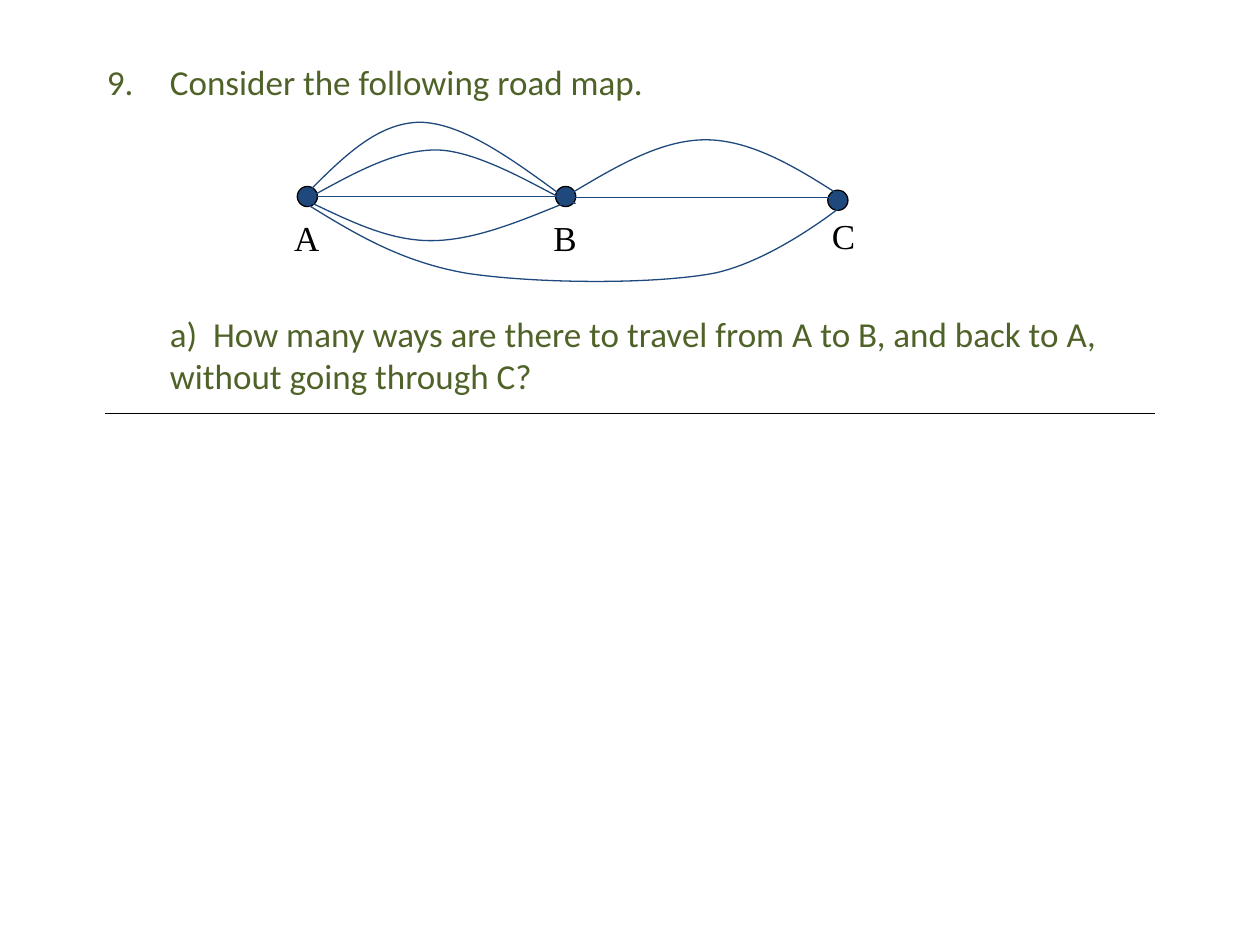
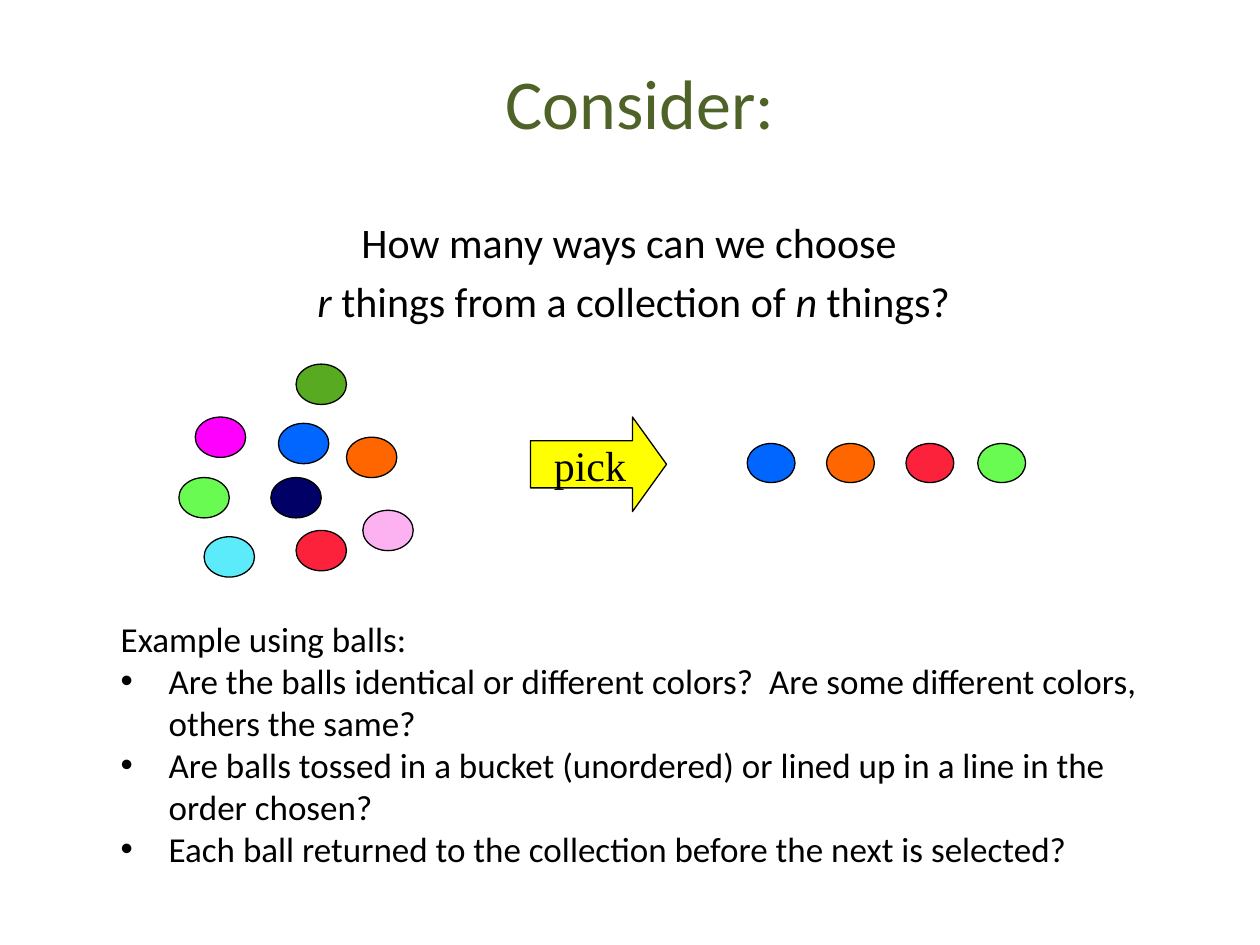
from lxml import etree
from pptx import Presentation
from pptx import util as u
from pptx.dml.color import RGBColor
from pptx.enum import shapes, text
from pptx.oxml.ns import qn

PX = 9144
BLACK = RGBColor(0x00, 0x00, 0x00)
OLIVE = RGBColor(0x4F, 0x62, 0x28)
NAVY = RGBColor(0x1F, 0x49, 0x7D)
YELLOW = RGBColor(0xFF, 0xFF, 0x00)
MAGENTA = RGBColor(0xFF, 0x00, 0xFF)
GREEN = RGBColor(0x58, 0xAA, 0x20)
BLUE = RGBColor(0x00, 0x66, 0xFF)
LIME = RGBColor(0x69, 0xFB, 0x51)
MIDNIGHT = RGBColor(0x00, 0x00, 0x66)
CYAN = RGBColor(0x5C, 0xEB, 0xFA)
PINK = RGBColor(0xFC, 0xB2, 0xF1)
RED = RGBColor(0xFC, 0x22, 0x3C)
ORANGE = RGBColor(0xFF, 0x66, 0x00)
SANS = "Calibri"
SERIF = "Times New Roman"
LEFT = text.PP_ALIGN.LEFT
CENTER = text.PP_ALIGN.CENTER
TOP = text.MSO_ANCHOR.TOP
BOTTOM = text.MSO_ANCHOR.BOTTOM
OVAL = shapes.MSO_SHAPE.OVAL


def write_text(parent, area, lines, size, color=BLACK, font=SANS, align=LEFT, anchor=TOP):
    box = parent.shapes.add_textbox(*[n * PX for n in area])
    frame = box.text_frame
    frame.word_wrap = True
    frame.vertical_anchor = anchor
    frame.text = "\n".join(lines)
    for para in frame.paragraphs:
        para.alignment = align
        para.font.size = u.Pt(size)
        for span in para.runs:
            span.font.size = u.Pt(size)
            span.font.name = font
            span.font.color.rgb = color
    return frame.paragraphs


def add_solid(parent, preset, area, color):
    shape = parent.shapes.add_shape(preset, *[n * PX for n in area])
    shape.shadow.inherit = False
    shape.fill.solid()
    shape.fill.fore_color.rgb = color
    shape.line.color.rgb = BLACK
    shape.line.width = u.Pt(0.75)
    return shape


deck = Presentation()
deck.slide_width = 1000 * PX
deck.slide_height = 750 * PX
blank = deck.slide_layouts[6]

road_page = deck.slides.add_slide(blank)
question = write_text(
    road_page, (75, 44, 850, 276),
    ["Consider the following road map.",
     "a)  How many ways are there to travel from A to B, and back to A, without going through C?"],
    20, OLIVE, anchor=BOTTOM)
for para in question:
    para._p.get_or_add_pPr().set("marL", str(50 * PX))
question[1].space_before = u.Pt(120)
number = question[0]._p.get_or_add_pPr()
number.set("indent", str(-50 * PX))
etree.SubElement(number, qn("a:buAutoNum"), type="arabicPeriod", startAt="9")

road_map = road_page.shapes.add_group_shape()
for left, top in [(657, 151), (236, 148), (441, 148)]:
    add_solid(road_map, OVAL, (left, top, 16, 16), NAVY)
for name, left, top in [("A", 216, 167), ("B", 421, 167), ("C", 642, 165)]:
    write_text(road_map, (left, top, 55, 44), [name], 20, font=SERIF, align=CENTER)

for parent, ends, color in [
    (road_page, (83, 328, 917, 328), BLACK),
    (road_map, (252, 156, 441, 156), NAVY),
    (road_map, (456, 157, 661, 157), NAVY),
]:
    line = parent.shapes.add_connector(shapes.MSO_CONNECTOR.STRAIGHT, *[n * PX for n in ends])
    line.line.color.rgb = color
    line.line.width = u.Pt(0.75)
    etree.SubElement(line._element.spPr, qn("a:effectLst"))

curved_roads = [
    [(242, 155), (271, 126), (299, 97), (334, 97), (369, 98), (410, 129), (451, 159)],
    [(247, 156), (280, 138), (313, 119), (346, 119), (380, 119), (431, 151), (447, 158),
     (464, 164), (455, 161), (446, 158)],
    [(449, 156), (486, 134), (523, 111), (560, 111), (597, 111), (634, 134), (671, 158)],
    [(245, 160), (277, 175), (308, 191), (342, 191), (377, 191), (414, 175), (451, 160)],
    [(245, 163), (281, 185), (318, 208), (371, 217), (425, 225), (516, 226), (566, 217),
     (615, 207), (670, 162), (670, 162)],
]
for controls in curved_roads:
    builder = road_map.shapes.build_freeform(*controls[0], scale=PX)
    builder.add_line_segments(controls[1:], close=False)
    road = builder.convert_to_shape()
    road.shadow.inherit = False
    road.fill.background()
    road.line.color.rgb = NAVY
    road.line.width = u.Pt(0.75)
    segments = list(road._element.iter(qn("a:lnTo")))
    outline = segments[0].getparent()
    for first in range(0, len(segments), 3):
        curve = etree.SubElement(outline, qn("a:cubicBezTo"))
        for segment in segments[first:first + 3]:
            curve.append(segment[0])
            outline.remove(segment)

ball_page = deck.slides.add_slide(blank)
choice = write_text(
    ball_page, (74, 167, 858, 106),
    ["How many ways can we choose ", ""],
    24, align=CENTER)
for para in choice:
    para.space_before = u.Pt(4.8)
for words, italic in [("r", True), (" things from a collection of ", False),
                      ("n", True), (" things?", False)]:
    span = choice[1].add_run()
    span.text = words
    span.font.size = u.Pt(24)
    span.font.name = SANS
    span.font.color.rgb = BLACK
    span.font.italic = italic

collection = ball_page.shapes.add_group_shape()
for left, top, color in [
    (155, 331, MAGENTA), (235, 289, GREEN), (221, 336, BLUE),
    (142, 379, LIME), (215, 379, MIDNIGHT), (162, 426, CYAN),
    (288, 405, PINK), (235, 421, RED), (275, 347, ORANGE),
]:
    add_solid(collection, OVAL, (left, top, 40, 32), color)

arrow = add_solid(ball_page, shapes.MSO_SHAPE.RIGHT_ARROW, (421, 331, 108, 75), YELLOW)
arrow.adjustments[1] = 0.36
arrow.text_frame.text = "pick"
arrow.text_frame.word_wrap = False
arrow.text_frame.vertical_anchor = text.MSO_ANCHOR.MIDDLE
pick = arrow.text_frame.paragraphs[0]
pick.alignment = CENTER
pick.runs[0].font.size = u.Pt(24)
pick.runs[0].font.name = SERIF
pick.runs[0].font.color.rgb = BLACK

chosen = ball_page.shapes.add_group_shape()
for left, color in [(593, BLUE), (656, ORANGE), (719, RED), (776, LIME)]:
    add_solid(chosen, OVAL, (left, 352, 38, 31), color)

write_text(ball_page, (83, 44, 850, 75), ["Consider:"], 40, OLIVE, align=CENTER, anchor=BOTTOM)
example = write_text(
    ball_page, (86, 485, 835, 246),
    ["Example using balls:",
     "Are the balls identical or different colors?  Are some different colors, others the same?",
     "Are balls tossed in a bucket (unordered) or lined up in a line in the order chosen?",
     "Each ball returned to the collection before the next is selected?"],
    20)
for para in example[1:]:
    bullet = para._p.get_or_add_pPr()
    bullet.set("marL", str(38 * PX))
    bullet.set("indent", str(-38 * PX))
    etree.SubElement(bullet, qn("a:buFont"), typeface="Arial")
    etree.SubElement(bullet, qn("a:buChar"), char="•")

deck.save("out.pptx")
